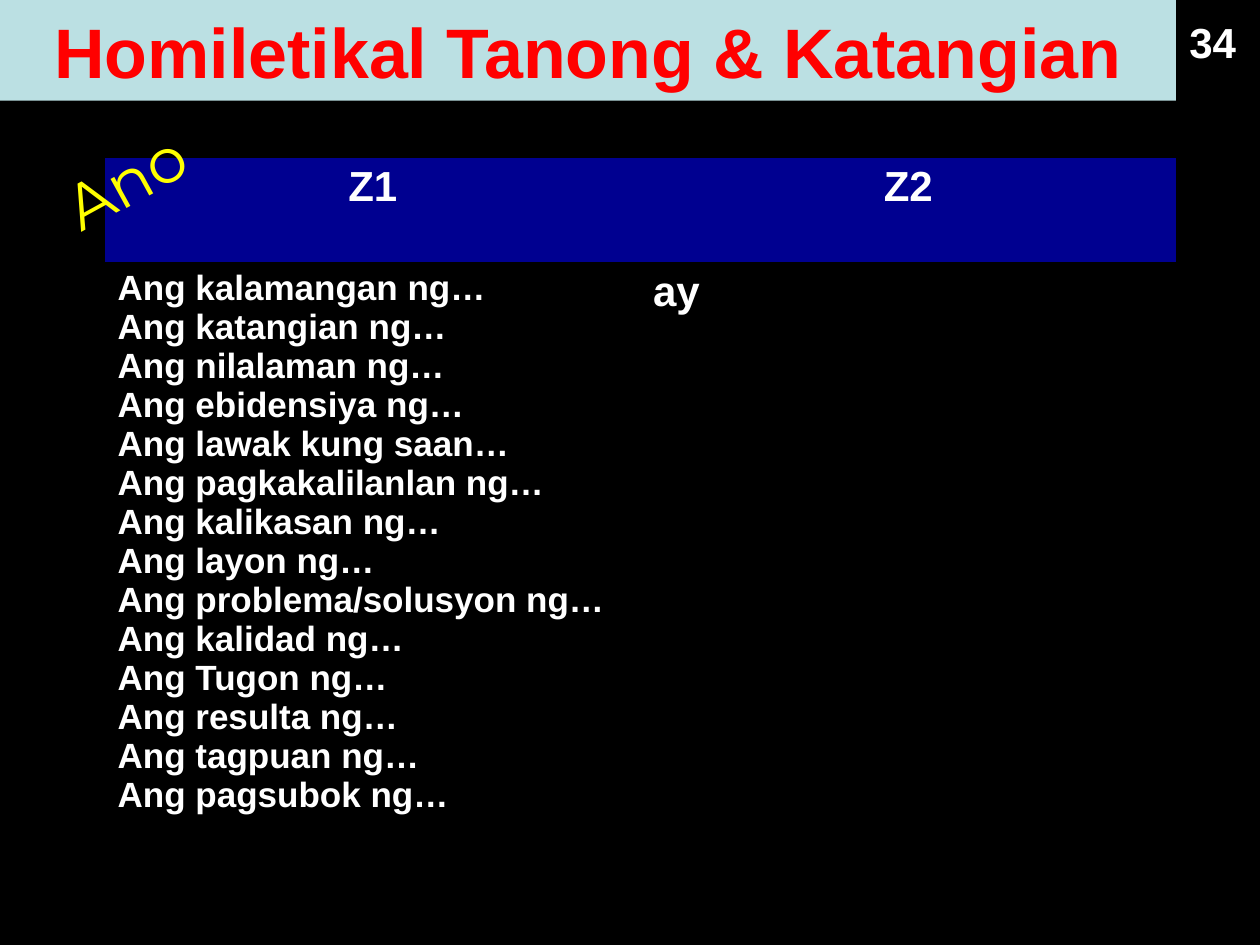
import dataclasses

import pptx
import pptx.dml.color
import pptx.enum.shapes
import pptx.enum.text
import pptx.util

ALIGN = pptx.enum.text.PP_ALIGN
ANCHOR = pptx.enum.text.MSO_ANCHOR
PLAIN = "{2D5ABB26-0587-4C30-8999-92F81FD0307C}"  # table style: no grid


@dataclasses.dataclass(frozen=True)
class Theme:
    back: str = "000000"
    text: str = "FFFFFF"
    band: str = "BBE0E3"
    title: str = "FF0000"
    head: str = "000090"
    tag: str = "FFFF00"
    font: str = "Arial"
    accent: str = "Montserrat"
    large: int = 40
    mid: int = 36
    base: int = 24
    small: int = 20


THEME = Theme()

TOPICS = [
    "Ang kalamangan ng…",
    "Ang katangian ng…",
    "Ang nilalaman ng…",
    "Ang ebidensiya ng…",
    "Ang lawak kung saan…",
    "Ang pagkakalilanlan ng…",
    "Ang kalikasan ng…",
    "Ang layon ng…",
    "Ang problema/solusyon ng…",
    "Ang kalidad ng…",
    "Ang Tugon ng…",
    "Ang resulta ng…",
    "Ang tagpuan ng…",
    "Ang pagsubok ng…",
]


def grid(*steps):
    """Turn grid steps, twelve to the inch, into lengths."""
    return [pptx.util.Inches(step / 12) for step in steps]


def paint(fill, color):
    fill.solid()
    fill.fore_color.rgb = pptx.dml.color.RGBColor.from_string(color)


def write(frame, lines, size=THEME.base, color=THEME.text, font=THEME.font,
          bold=True, align=ALIGN.CENTER, anchor=ANCHOR.TOP, wrap=True):
    """Write lines into one paragraph, parted by line breaks."""
    frame.word_wrap = wrap
    frame.vertical_anchor = anchor
    para = frame.paragraphs[0]
    para.alignment = align
    for i, line in enumerate(lines):
        if i:
            para.add_line_break()
        run = para.add_run()
        run.text = line
        run.font.name = font
        run.font.size = pptx.util.Pt(size)
        run.font.bold = bold
        run.font.color.rgb = pptx.dml.color.RGBColor.from_string(color)


def label(slide, box, text, turn=0, **style):
    shape = slide.shapes.add_textbox(*grid(*box))
    shape.rotation = turn
    write(shape.text_frame, [text], **style)


def banner(slide, box, text, **style):
    kind = pptx.enum.shapes.MSO_SHAPE.RECTANGLE
    shape = slide.shapes.add_shape(kind, *grid(*box))
    shape.shadow.inherit = False
    paint(shape.fill, THEME.band)
    shape.line.fill.background()
    write(shape.text_frame, [text], anchor=ANCHOR.MIDDLE, **style)


def matrix(slide, box, heights, rows):
    """Add a table; each cell is given as (lines, fill, style)."""
    frame = slide.shapes.add_table(len(rows), len(rows[0]), *grid(*box))
    table = frame.table
    table.first_row = table.horz_banding = False
    frame._element.graphic.graphicData.tbl.tblPr[0].text = PLAIN
    for row, height in zip(table.rows, grid(*heights)):
        row.height = height
    for r, row in enumerate(rows):
        for c, (lines, fill, style) in enumerate(row):
            cell = table.cell(r, c)
            paint(cell.fill, fill)
            write(cell.text_frame, lines, wrap=None, anchor=None, **style)


def main():
    deck = pptx.Presentation()
    deck.slide_width, deck.slide_height = grid(120, 90)
    slide = deck.slides.add_slide(deck.slide_layouts[6])
    paint(slide.background.fill, THEME.back)

    # Table of sentence parts
    left = {"align": ALIGN.LEFT}
    matrix(slide, (10, 15, 102, 70), (10, 60), [
        [([name], THEME.head, {}) for name in ("Z1", "Z2")],
        [(TOPICS, THEME.back, {"size": THEME.small, **left}),
         (["ay"], THEME.back, left)],
    ])

    # Page number and title band
    label(slide, (112, 1, 7, 6), "34", wrap=False)
    banner(slide, (0, 0, 112, 9.6), "Homiletikal Tanong & Katangian",
           size=THEME.large, color=THEME.title)

    # Slanted question word
    label(slide, (2, 12.6, 22.7, 14.3), "Ano", turn=331.2, size=THEME.mid,
          color=THEME.tag, font=THEME.accent, bold=False, wrap=False)

    deck.save("out.pptx")


if __name__ == "__main__":
    main()
